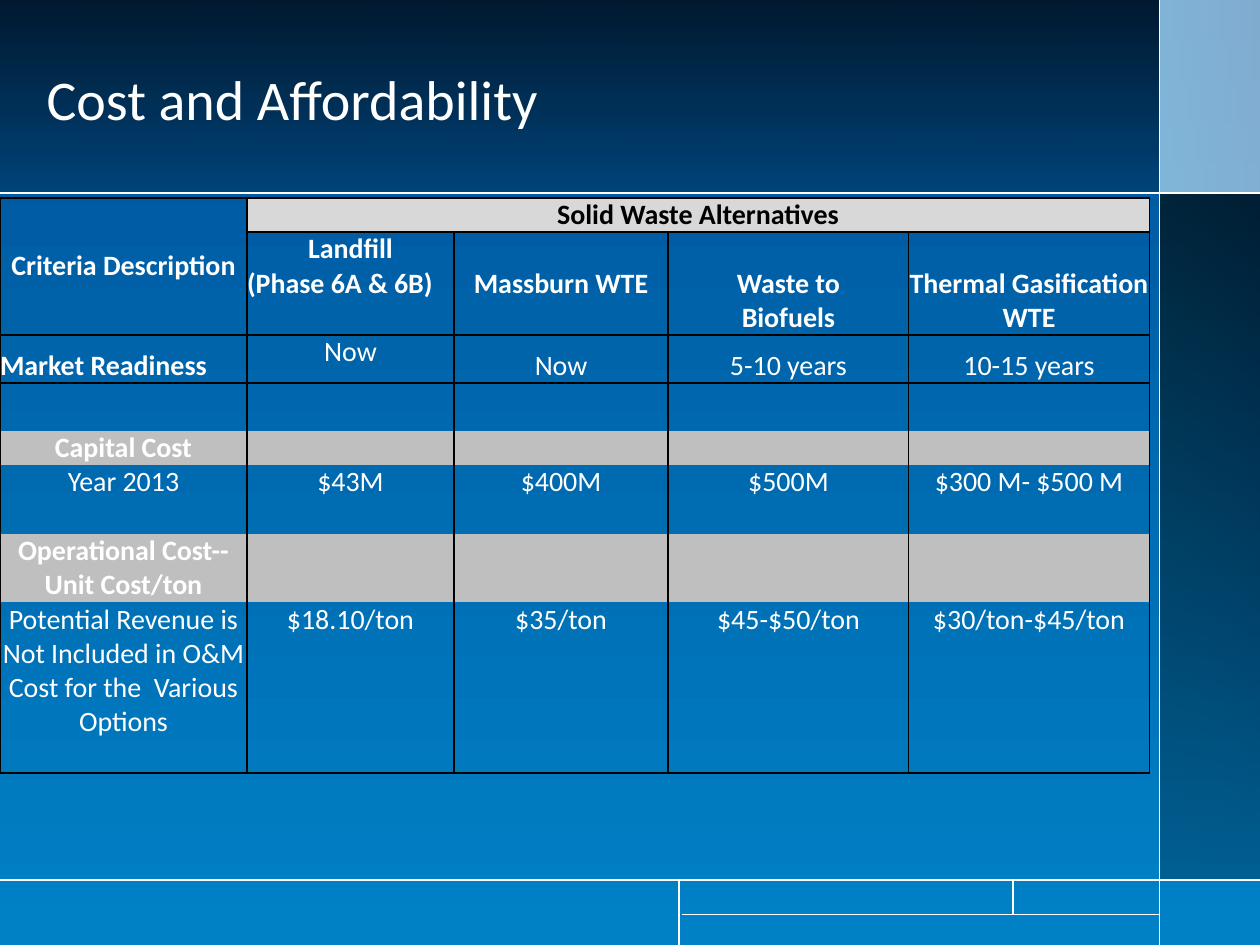
from dataclasses import dataclass
from typing import NamedTuple

from lxml.etree import SubElement
from pptx import Presentation
from pptx.dml.color import RGBColor
from pptx.enum.shapes import MSO_CONNECTOR, MSO_SHAPE
from pptx.enum.text import MSO_ANCHOR, PP_ALIGN
from pptx.oxml.ns import qn
from pptx.util import Cm, Pt


@dataclass(frozen=True)
class Theme:
    font: str = "Calibri"
    title_size: int = 32
    table_size: int = 16
    rule_width: float = 0.75
    border_width: int = 1
    white: str = "FFFFFF"
    black: str = "000000"
    sky: str = "0081C6"
    navy: str = "00539B"
    header: str = "D8D8D8"
    section: str = "BFBFBF"


class Panel(NamedTuple):
    left: float
    top: float
    width: float
    height: float
    colors: tuple[str, ...]
    opacities: tuple[int, ...]
    angle: int = 270


class Rule(NamedTuple):
    x1: float
    y1: float
    x2: float
    y2: float


class Entry(NamedTuple):
    lines: tuple[str, ...] = ()
    anchor: MSO_ANCHOR = MSO_ANCHOR.BOTTOM
    aligns: tuple[PP_ALIGN, ...] = (PP_ALIGN.CENTER,)
    bold: bool = False
    color: str = "FFFFFF"


THEME = Theme()
PAGE_W, PAGE_H = 25.4, 19.05
SIDE, HEAD, FOOT = 23.37, 3.89, 17.74
SIDE_W = PAGE_W - SIDE
CENTER, LEFT = PP_ALIGN.CENTER, PP_ALIGN.LEFT
TOP, MIDDLE, BOTTOM = MSO_ANCHOR.TOP, MSO_ANCHOR.MIDDLE, MSO_ANCHOR.BOTTOM

BLUES, BLACKS = (THEME.sky, THEME.sky), (THEME.black, THEME.black)
PANELS = [
    Panel(0, 0, PAGE_W, PAGE_H, (THEME.navy, THEME.sky), (100, 100)),
    Panel(SIDE, 0, SIDE_W, FOOT, BLUES, (50, 10), 0),
    Panel(SIDE, 0, SIDE_W, HEAD, (THEME.white,), (50,)),
    Panel(SIDE, HEAD, SIDE_W, FOOT - HEAD, BLUES, (50, 10), 0),
    Panel(0, 0, SIDE, HEAD, BLACKS, (70, 25)),
    Panel(SIDE, HEAD, SIDE_W, FOOT - HEAD, BLACKS, (70, 25)),
]
RULES = [
    Rule(13.74, 18.43, SIDE, 18.43),
    Rule(13.69, FOOT, 13.69, PAGE_H),
    Rule(20.42, FOOT, 20.42, 18.43),
    Rule(SIDE, 0, SIDE, PAGE_H),
    Rule(0, HEAD, PAGE_W, HEAD),
    Rule(0, FOOT, PAGE_W, FOOT),
]

COLUMN_WIDTHS = [4.98, 4.17, 4.32, 4.85, 4.85]
ROW_HEIGHTS = [0.69, 2.07, 0.97, 0.97, 0.69, 0.69, 0.69, 1.39, 3.44]
SECTION_ROWS = (4, 7)
RULED_ROWS = (0, 1, 2)


def values(*texts: str, anchor: MSO_ANCHOR = BOTTOM) -> list[Entry]:
    return [Entry((text,), anchor) for text in texts]


# Table wording, keyed by row; rows that are not listed stay empty
ENTRIES = {
    0: [Entry(("Criteria Description",), MIDDLE, bold=True),
        Entry(("Solid Waste Alternatives",), bold=True, color=THEME.black)],
    1: [Entry(),
        Entry(("Landfill", "(Phase 6A & 6B)"), TOP, (CENTER, LEFT), True),
        Entry(("Massburn WTE",), MIDDLE, bold=True),
        Entry(("Waste to", "Biofuels"), aligns=(CENTER, CENTER), bold=True),
        Entry(("Thermal Gasification WTE",), bold=True)],
    2: [Entry(("Market Readiness",), aligns=(LEFT,), bold=True),
        Entry(("Now",), TOP), *values("Now", "5-10 years", "10-15 years")],
    4: [Entry(("Capital Cost",), bold=True)],
    5: values("Year 2013", "$43M", "$400M", "$500M", "$300 M- $500 M"),
    7: [Entry(("Operational Cost--Unit Cost/ton",), bold=True)],
    8: values("Potential Revenue is Not Included in O&M Cost for the  Various Options",
              "$18.10/ton", "$35/ton", "$45-$50/ton", "$30/ton-$45/ton", anchor=TOP),
}


def apply(target, formats: dict) -> None:
    for name, value in formats.items():
        setattr(target, name, value)


def add_panel(page, panel: Panel) -> None:
    shape = page.shapes.add_shape(MSO_SHAPE.RECTANGLE, Cm(panel.left), Cm(panel.top),
                                  Cm(panel.width), Cm(panel.height))
    shape.shadow.inherit = False
    if len(panel.colors) == 1:
        shape.fill.solid()
        shape.fill.fore_color.rgb = RGBColor.from_string(panel.colors[0])
    else:
        shape.fill.gradient()
        shape.fill.gradient_angle = panel.angle
        for stop, color in zip(shape.fill.gradient_stops, panel.colors):
            stop.color.rgb = RGBColor.from_string(color)
    tints = list(shape._element.spPr.iter(qn("a:srgbClr")))
    for tint, opacity in zip(tints, panel.opacities):
        SubElement(tint, qn("a:alpha"), val=str(opacity * 1000))
    shape.line.fill.background()


def add_rule(page, rule: Rule) -> None:
    line = page.shapes.add_connector(MSO_CONNECTOR.STRAIGHT, *map(Cm, rule))
    line.line.color.rgb = RGBColor.from_string(THEME.white)
    line.line.width = Pt(THEME.rule_width)
    SubElement(line._element.spPr, qn("a:effectLst"))


def write_span(para, text: str, size: int, color: str, bold: bool = False) -> None:
    span = para.add_run()
    span.text = text
    apply(span.font, {"name": THEME.font, "size": Pt(size), "bold": bold})
    span.font.color.rgb = RGBColor.from_string(color)


def add_title(page, text: str) -> None:
    box = page.shapes.add_textbox(Cm(0.69), Cm(0), Cm(22.6), Cm(3.94))
    apply(box.text_frame, {"word_wrap": True, "vertical_anchor": MIDDLE})
    write_span(box.text_frame.paragraphs[0], text, THEME.title_size, THEME.white)


def set_borders(cell, row: int) -> None:
    last = len(ROW_HEIGHTS) - 1
    visible = {"L": True, "R": True, "T": row <= max(RULED_ROWS) + 1,
               "B": row in RULED_ROWS or row == last}
    properties = cell._tc.get_or_add_tcPr()
    for side, shown in visible.items():
        line = SubElement(properties, qn(f"a:ln{side}"), w=str(Pt(THEME.border_width)))
        fill = SubElement(line, qn("a:solidFill" if shown else "a:noFill"))
        if shown:
            SubElement(fill, qn("a:srgbClr"), val=THEME.black)


def fill_cell(cell, entry: Entry, row: int, shade: str | None) -> None:
    apply(cell, {"margin_left": 0, "margin_right": 0, "margin_top": 0,
                 "margin_bottom": 0, "vertical_anchor": entry.anchor})
    set_borders(cell, row)
    if shade:
        cell.fill.solid()
        cell.fill.fore_color.rgb = RGBColor.from_string(shade)
    else:
        cell.fill.background()
    frame = cell.text_frame
    for index, (text, align) in enumerate(zip(entry.lines, entry.aligns)):
        para = frame.add_paragraph() if index else frame.paragraphs[0]
        para.alignment = align
        write_span(para, text, THEME.table_size, entry.color, entry.bold)
    if not entry.lines:  # keeps empty rows at the table's line height
        SubElement(frame.paragraphs[0]._p, qn("a:endParaRPr"),
                   sz=str(THEME.table_size * 100))


def add_cost_table(page) -> None:
    table = page.shapes.add_table(len(ROW_HEIGHTS), len(COLUMN_WIDTHS), Cm(0), Cm(3.99),
                                  Cm(sum(COLUMN_WIDTHS)), Cm(sum(ROW_HEIGHTS))).table
    apply(table, {"first_row": False, "horz_banding": False})
    for column, width in zip(table.columns, COLUMN_WIDTHS):
        column.width = Cm(width)
    for row, height in enumerate(ROW_HEIGHTS):
        table.rows[row].height = Cm(height)
        entries = ENTRIES.get(row, [])
        for column in range(len(COLUMN_WIDTHS)):
            entry = entries[column] if column < len(entries) else Entry()
            shade = THEME.section if row in SECTION_ROWS else None
            if row == 0 and column > 0:
                shade = THEME.header
            fill_cell(table.cell(row, column), entry, row, shade)
    table.cell(0, 0).merge(table.cell(1, 0))
    table.cell(0, 1).merge(table.cell(0, 4))


def main() -> None:
    deck = Presentation()
    apply(deck, {"slide_width": Cm(PAGE_W), "slide_height": Cm(PAGE_H)})
    page = deck.slides.add_slide(deck.slide_layouts[6])
    # Backdrop
    for panel in PANELS:
        add_panel(page, panel)
    for rule in RULES:
        add_rule(page, rule)
    # Content
    add_title(page, "Cost and Affordability")
    add_cost_table(page)
    deck.save("out.pptx")


if __name__ == "__main__":
    main()
